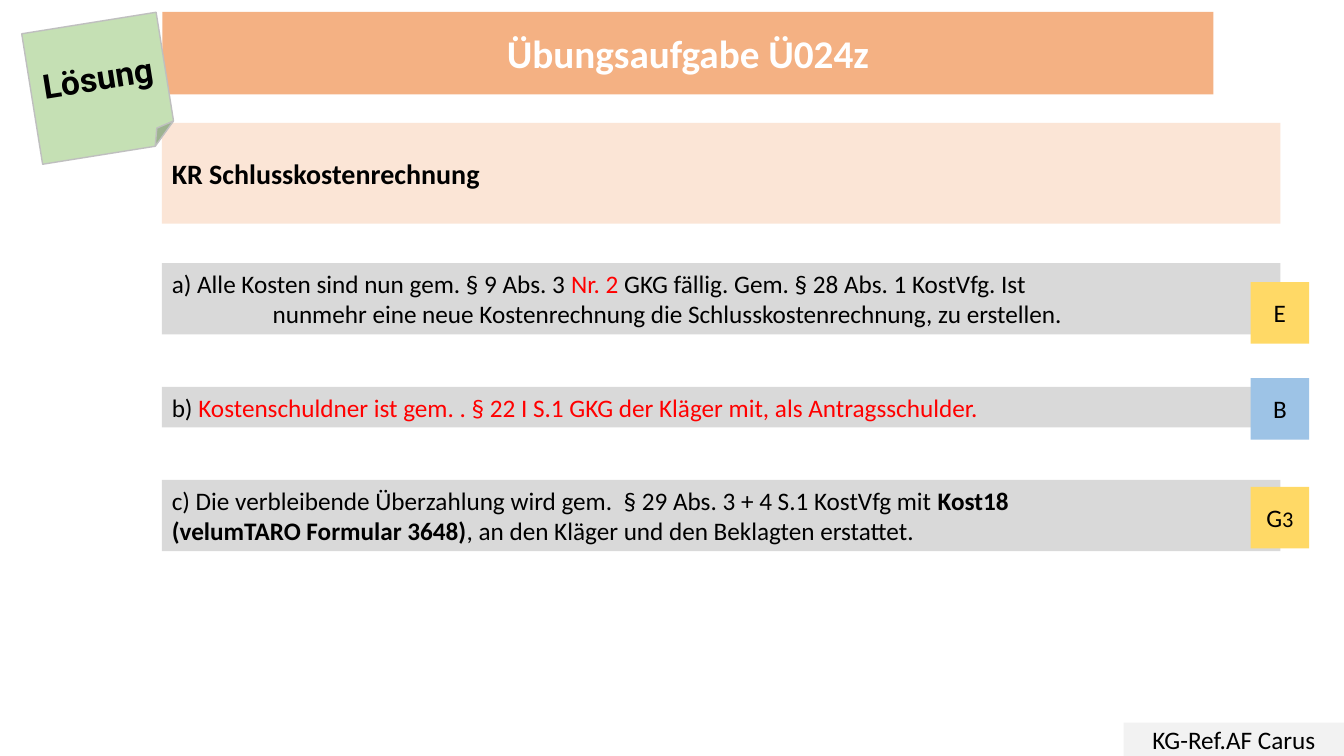
from lxml import etree
from pptx import Presentation
from pptx import util as u
from pptx.dml.color import RGBColor
from pptx.enum import shapes, text
from pptx.oxml import ns

BLACK = RGBColor(0x00, 0x00, 0x00)
WHITE = RGBColor(0xFF, 0xFF, 0xFF)
RED = RGBColor(0xFF, 0x00, 0x00)
ORANGE = RGBColor(0xF4, 0xB1, 0x83)
PEACH = RGBColor(0xFB, 0xE5, 0xD6)
GREY = RGBColor(0xD9, 0xD9, 0xD9)
PALE = RGBColor(0xF2, 0xF2, 0xF2)
EDGE = RGBColor(0xBF, 0xBF, 0xBF)
GREEN = RGBColor(0xC5, 0xE0, 0xB4)
YELLOW = RGBColor(0xFF, 0xD9, 0x66)
BLUE = RGBColor(0x9D, 0xC3, 0xE6)

# Content: a line is a list of runs, a run is its text and what differs
TITLE = [[("Übungsaufgabe Ü024z", {"size": 28, "bold": True, "color": WHITE})]]
HEADING = [[("KR Schlusskostenrechnung", {"size": 20, "bold": True})]]
NOTE = [[("Lösung", {"size": 24, "bold": True, "font": "Roboto"})]]
FOOTER = [[("KG-Ref.AF Carus", {})]]

# Answers: top, height, lines, badge top, badge colour, badge runs
ANSWERS = [
    (6.63, 1.8,
     [[("a) Alle Kosten sind nun gem. § 9 Abs. 3 ", {}),
       ("Nr. 2 ", {"color": RED}),
       ("GKG fällig. Gem. § 28 Abs. 1 KostVfg. Ist", {})],
      [("nunmehr eine neue Kostenrechnung die Schlusskostenrechnung, zu erstellen.", {})]],
     7.11, YELLOW, [("E", {})]),
    (9.75, 1.02,
     [[("b) ", {}),
       ("Kostenschuldner ist gem. . § 22 I S.1 GKG der Kläger mit, als Antragsschulder.",
        {"color": RED})]],
     9.53, BLUE, [("B", {})]),
    (12.09, 1.8,
     [[("c) Die verbleibende Überzahlung wird gem.  § 29 Abs. 3 + 4 S.1 KostVfg mit ", {}),
       ("Kost18", {"bold": True})],
      [("(velumTARO Formular 3648)", {"bold": True}),
       (", an den Kläger und den Beklagten erstattet.", {})]],
     12.27, YELLOW, [("G", {}), ("3", {"size": 16})]),
]
BAR_LEFT, BAR_WIDTH = 4.08, 28.19
BADGE_LEFT, BADGE_WIDTH, BADGE_HEIGHT = 31.52, 1.47, 1.55


def write(box, lines, align):
    frame = box.text_frame
    frame.word_wrap = True
    frame.auto_size = text.MSO_AUTO_SIZE.NONE
    frame.vertical_anchor = text.MSO_ANCHOR.MIDDLE
    for index, runs in enumerate(lines):
        para = frame.add_paragraph() if index else frame.paragraphs[0]
        para.alignment = align
        for words, style in runs:
            span = para.add_run()
            span.text = words
            span.font.name = style.get("font", "Calibri")
            span.font.size = u.Pt(style.get("size", 18))
            span.font.bold = style.get("bold", False)
            span.font.color.rgb = style.get("color", BLACK)


def paint(box, color):
    box.fill.solid()
    box.fill.fore_color.rgb = color
    box.line.fill.background()


def add_box(place, color, lines, align=text.PP_ALIGN.CENTER,
            kind=shapes.MSO_SHAPE.RECTANGLE):
    box = page.shapes.add_shape(kind, *map(u.Cm, place))
    box.shadow.inherit = False
    paint(box, color)
    write(box, lines, align)
    return box


deck = Presentation()
deck.slide_width, deck.slide_height = u.Cm(33.87), u.Cm(19.05)
page = deck.slides.add_slide(deck.slide_layouts[5])

# Title banner: the placeholder gets rounded corners
title = page.shapes.title
title.left, title.top, title.width, title.height = map(u.Cm, (4.09, 0.3, 26.49, 2.08))
outline = etree.SubElement(title.element.spPr, ns.qn("a:prstGeom"), prst="roundRect")
etree.SubElement(outline, ns.qn("a:avLst"))
paint(title, ORANGE)
write(title, TITLE, text.PP_ALIGN.CENTER)

# Heading and footer
add_box((BAR_LEFT, 3.1, BAR_WIDTH, 2.54), PEACH, HEADING, text.PP_ALIGN.LEFT)
add_box((28.32, 18.21, 5.55, 0.84), PALE, FOOTER)

# Answer bars with their badges
bars = []
for top, height, lines, badge_top, badge_color, badge in ANSWERS:
    bars.append(add_box((BAR_LEFT, top, BAR_WIDTH, height), GREY, lines,
                        text.PP_ALIGN.LEFT))
    add_box((BADGE_LEFT, badge_top, BADGE_WIDTH, BADGE_HEIGHT), badge_color, [badge])

# The second line of answer a) is indented
indented = bars[0].text_frame.paragraphs[1]
indented.element.get_or_add_pPr().set("marL", str(u.Cm(2.54))) if hasattr(
    indented, "element") else indented._p.get_or_add_pPr().set("marL", str(u.Cm(2.54)))

# Sticky note
note = add_box((0.79, 0.56, 3.43, 3.33), GREEN, NOTE,
               kind=shapes.MSO_SHAPE.FOLDED_CORNER)
note.rotation = 350.9
note.line.color.rgb = EDGE
note.line.width = u.Pt(1)
note.text_frame.word_wrap = False

deck.save("out.pptx")
